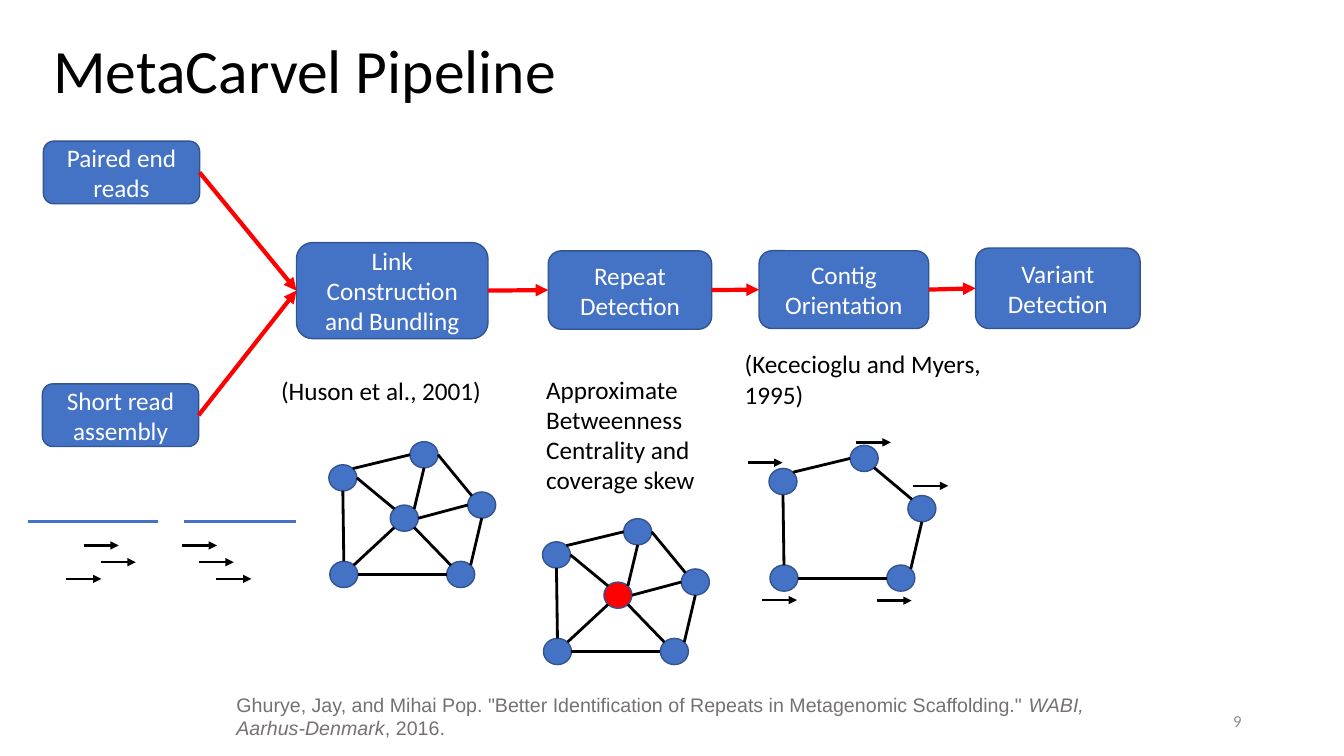
from dataclasses import dataclass
from math import cos, radians, sin

from lxml import etree
from pptx import Presentation
from pptx.dml.color import RGBColor
from pptx.enum.shapes import MSO_CONNECTOR, MSO_SHAPE
from pptx.enum.text import MSO_ANCHOR, PP_ALIGN
from pptx.oxml.ns import qn
from pptx.util import Pt

LINE = MSO_CONNECTOR.STRAIGHT
ROUND, OVAL = MSO_SHAPE.ROUNDED_RECTANGLE, MSO_SHAPE.OVAL
TOP, MID = MSO_ANCHOR.TOP, MSO_ANCHOR.MIDDLE
LEFT, CENTER, RIGHT = PP_ALIGN.LEFT, PP_ALIGN.CENTER, PP_ALIGN.RIGHT


@dataclass(frozen=True)
class Theme:
    blue: str = "4472C4"
    edge: str = "325491"
    red: str = "FF0000"
    black: str = "000000"
    white: str = "FFFFFF"
    gray: str = "767171"
    pale: str = "8C8C8C"
    font: str = "Calibri"
    cite: str = "Arial"
    title: int = 44
    body: int = 18
    small: int = 14
    page: int = 12


T = Theme()

# Pipeline steps: left, top, width, height
STEPS = {
    "Paired end reads": (31, 100.8, 111.6, 44.8),
    "Short read assembly": (30.3, 274.2, 111.6, 44.8),
    "Link Construction and Bundling": (211.8, 173.3, 136.8, 68.6),
    "Repeat Detection": (391.6, 179.2, 116.8, 56),
    "Contig Orientation": (542.2, 179.1, 121.2, 55.6),
    "Variant Detection": (696.9, 177.2, 117.5, 57.5),
}

# Graph nodes, as offsets from node A, and edges with a compass angle per end
NODE_W, NODE_H = 20, 18.7
NODES = {"A": (0, 0), "B": (58, -16.5), "C": (0.7, 69),
         "D": (99.2, 19.4), "E": (43.9, 28.8), "F": (84.2, 69)}
RING = [("A", 45, "B", 180), ("A", 270, "C", 90),
        ("C", 0, "F", 180), ("F", 45, "D", 270)]
SPOKES = [("A", 0, "E", 135), ("C", 45, "E", 225), ("E", 45, "B", 270),
          ("E", 315, "F", 135), ("E", 0, "D", 180)]
CLOSED = RING + [("B", 0, "D", 135)] + SPOKES
OPEN = RING + [("B", 315, "D", 135)]

# Starts of the short read arrows
READ_W = 25
READS = [(59.8, 389.6), (130, 389.6), (72, 401.6), (142, 401.6),
         (47.5, 413.5), (154.6, 413.5)]
TURNS = [(534, 330.5), (611.3, 316), (544.3, 428.6), (626.2, 429), (652.3, 347)]


def rgb(code):
    return RGBColor.from_string(code)


def style(para, size, color, font=T.font, align=LEFT):
    para.alignment = align
    para.font.size = Pt(size)
    para.font.name = font
    para.font.color.rgb = rgb(color)


def label(slide, area, text, size=T.body, color=T.black, font=T.font,
          align=LEFT, anchor=TOP):
    frame = slide.shapes.add_textbox(*map(Pt, area)).text_frame
    frame.word_wrap = True
    frame.vertical_anchor = anchor
    para = frame.paragraphs[0]
    para.add_run().text = text
    style(para, size, color, font, align)
    return para


def block(slide, kind, area, fill=T.blue):
    shape = slide.shapes.add_shape(kind, *map(Pt, area))
    shape.shadow.inherit = False
    shape.fill.solid()
    shape.fill.fore_color.rgb = rgb(fill)
    shape.line.color.rgb = rgb(T.edge)
    shape.line.width = Pt(1)
    return shape


def step(slide, text, area):
    shape = block(slide, ROUND, area)
    frame = shape.text_frame
    frame.word_wrap = True
    frame.vertical_anchor = MID
    frame.text = text
    style(frame.paragraphs[0], T.body, T.white, align=CENTER)
    return shape


def line(slide, start, end, color=T.black, width=2, arrow=False):
    link = slide.shapes.add_connector(LINE, *map(Pt, (*start, *end)))
    link.line.color.rgb = rgb(color)
    link.line.width = Pt(width)
    if arrow:
        etree.SubElement(link.line._get_or_add_ln(), qn("a:tailEnd"), type="triangle")
    etree.SubElement(link._element.spPr, qn("a:effectLst"))
    return link


def flow(slide, first, last):
    link = line(slide, (0, 0), (0, 0), T.red, 3, True)
    link.begin_connect(first, 3)
    link.end_connect(last, 1)


def reads(slide, starts):
    for x, y in starts:
        line(slide, (x, y), (x + READ_W, y), width=1.75, arrow=True)


def rim(x, y, name, angle):
    dx, dy = NODES[name]
    turn = radians(angle)
    return (x + dx + NODE_W / 2 * (1 + cos(turn)),
            y + dy + NODE_H / 2 * (1 - sin(turn)))


def graph(slide, x, y, edges, core=T.blue):
    used = {name for a, _, b, _ in edges for name in (a, b)}
    for name in sorted(used):
        dx, dy = NODES[name]
        fill = core if name == "E" else T.blue
        block(slide, OVAL, (x + dx, y + dy, NODE_W, NODE_H), fill)
    for a, out, b, into in edges:
        line(slide, rim(x, y, a, out), rim(x, y, b, into))


def main():
    deck = Presentation()
    deck.slide_width, deck.slide_height = Pt(960), Pt(540)
    slide = deck.slides.add_slide(deck.slide_layouts[6])

    # Title
    title = label(slide, (31, 0, 828, 104.4), "MetaCarvel Pipeline", T.title, anchor=MID)
    title.line_spacing = 0.9

    # Pipeline
    pair, short, *chain = [step(slide, text, area) for text, area in STEPS.items()]
    flow(slide, pair, chain[0])
    flow(slide, short, chain[0])
    for first, last in zip(chain, chain[1:]):
        flow(slide, first, last)

    # Notes under the steps
    label(slide, (193.7, 264.2, 163.4, 29), "(Huson et al., 2001)")
    label(slide, (383, 263.5, 121, 94.5),
          "Approximate Betweenness Centrality and coverage skew")
    label(slide, (524.9, 245.5, 184.3, 51), "(Kececioglu and Myers, 1995)")

    # Contigs and reads
    for left, right in ((19.8, 112.6), (131.3, 211.8)):
        line(slide, (left, 372.5), (right, 372.5), T.blue, 2.5)
    reads(slide, READS)

    # Graphs
    graph(slide, 234.9, 332, CLOSED)
    graph(slide, 387.5, 387, CLOSED, T.red)
    graph(slide, 549.3, 334.6, OPEN)
    reads(slide, TURNS)

    # Citation and page number
    cite = label(slide, (161.8, 491.2, 632, 41),
                 'Ghurye, Jay, and Mihai Pop. "Better Identification of Repeats '
                 'in Metagenomic Scaffolding." ', T.small, T.gray, T.cite)
    venue = cite.add_run()
    venue.text = "WABI, Aarhus-Denmark"
    venue.font.italic = True
    cite.add_run().text = ", 2016."
    label(slide, (678, 500.5, 216, 28.8), "9", T.page, T.pale, align=RIGHT, anchor=MID)

    deck.save("out.pptx")


if __name__ == "__main__":
    main()
